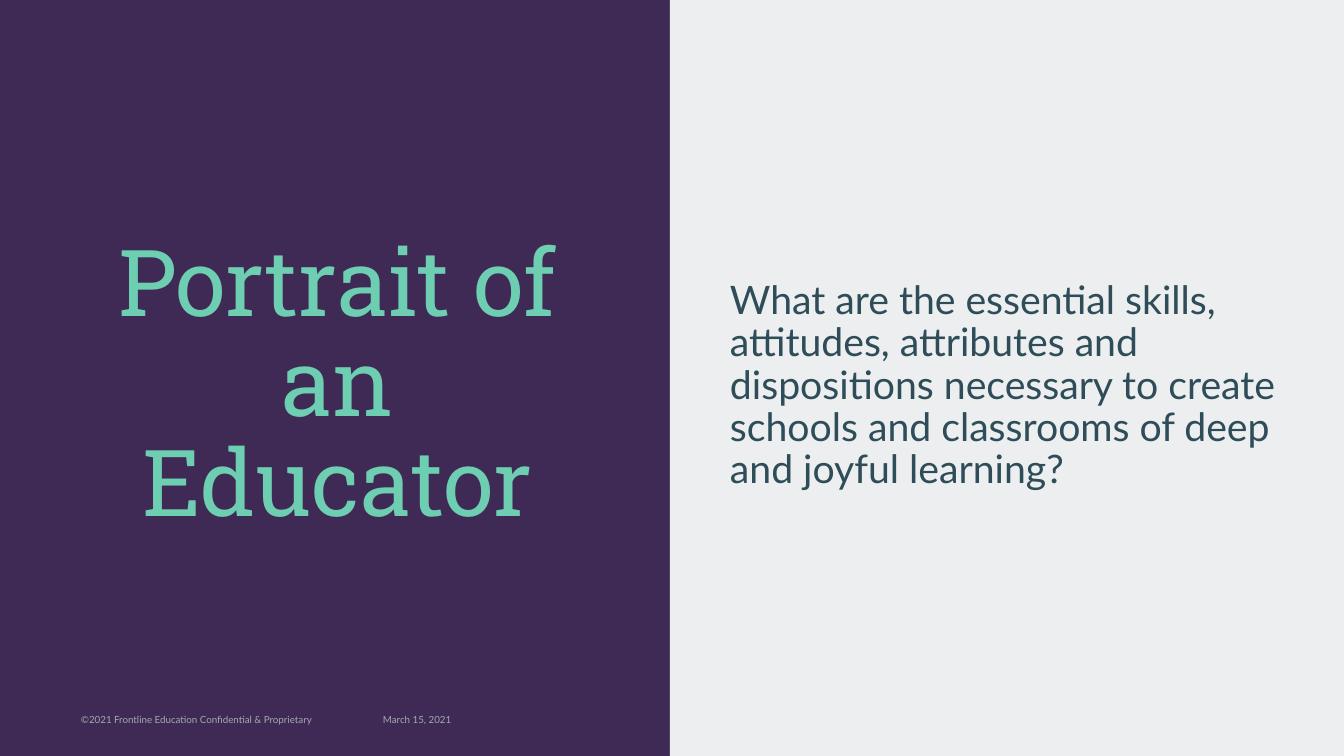
import pptx
import pptx.dml.color
import pptx.enum.shapes
import pptx.enum.text
import pptx.oxml.ns
import pptx.util
from lxml import etree

PX = 914400 / 100.8
MIDDLE = pptx.enum.text.MSO_ANCHOR.MIDDLE
BOTTOM = pptx.enum.text.MSO_ANCHOR.BOTTOM
LEFT = pptx.enum.text.PP_ALIGN.LEFT
CENTER = pptx.enum.text.PP_ALIGN.CENTER


def paint(color_format, value):
    color_format.rgb = pptx.dml.color.RGBColor.from_string(value)


def write(shape, box, text, font, size, color, anchor, align=LEFT, spacing=1.0):
    shape.left, shape.top, shape.width, shape.height = [round(v * PX) for v in box]
    frame = shape.text_frame
    frame.text = text
    frame.word_wrap = True
    frame.auto_size = pptx.enum.text.MSO_AUTO_SIZE.NONE
    frame.vertical_anchor = anchor
    frame.margin_left = frame.margin_top = frame.margin_right = frame.margin_bottom = 0
    paragraph = frame.paragraphs[0]
    properties = paragraph._p.get_or_add_pPr()
    properties.set("marL", "0")
    properties.set("indent", "0")
    etree.SubElement(properties, pptx.oxml.ns.qn("a:buNone"))
    paragraph.alignment = align
    paragraph.line_spacing = spacing
    paragraph.space_before = pptx.util.Pt(0)
    paragraph.font.name = font
    paragraph.font.size = pptx.util.Pt(size)
    paint(paragraph.font.color, color)


deck = pptx.Presentation()
deck.slide_width = round(1344 * PX)
deck.slide_height = round(756 * PX)
slide = deck.slides.add_slide(deck.slide_layouts[1])
shapes = slide.shapes

for order, (left, width, color) in enumerate([(0, 670, "3F2A56"), (670, 674, "ECEEEF")]):
    panel = shapes.add_shape(
        pptx.enum.shapes.MSO_SHAPE.RECTANGLE,
        round(left * PX), 0, round(width * PX), deck.slide_height)
    panel.shadow.inherit = False
    panel.fill.solid()
    paint(panel.fill.fore_color, color)
    panel.line.fill.background()
    panel.element.getparent().insert(2 + order, panel.element)

write(shapes.title, (81, 98, 513, 577), "Portrait of an Educator",
      "Roboto Slab", 66, "6ECEB2", MIDDLE, CENTER, 0.9)

write(slide.placeholders[1], (730, 98, 552, 577),
      "What are the essential skills, attitudes, attributes and dispositions "
      "necessary to create schools and classrooms of deep and joyful learning?",
      "Lato", 28, "2E4D58", MIDDLE, spacing=0.9)

for left, width, text in [
    (81, 302, "©2021 Frontline Education Confidential & Proprietary"),
    (383, 250, "March 15, 2021"),
]:
    write(shapes.add_textbox(0, 0, 0, 0), (left, 705, width, 20), text,
          "Lato", 7, "A2AAAD", BOTTOM)

deck.save("out.pptx")
